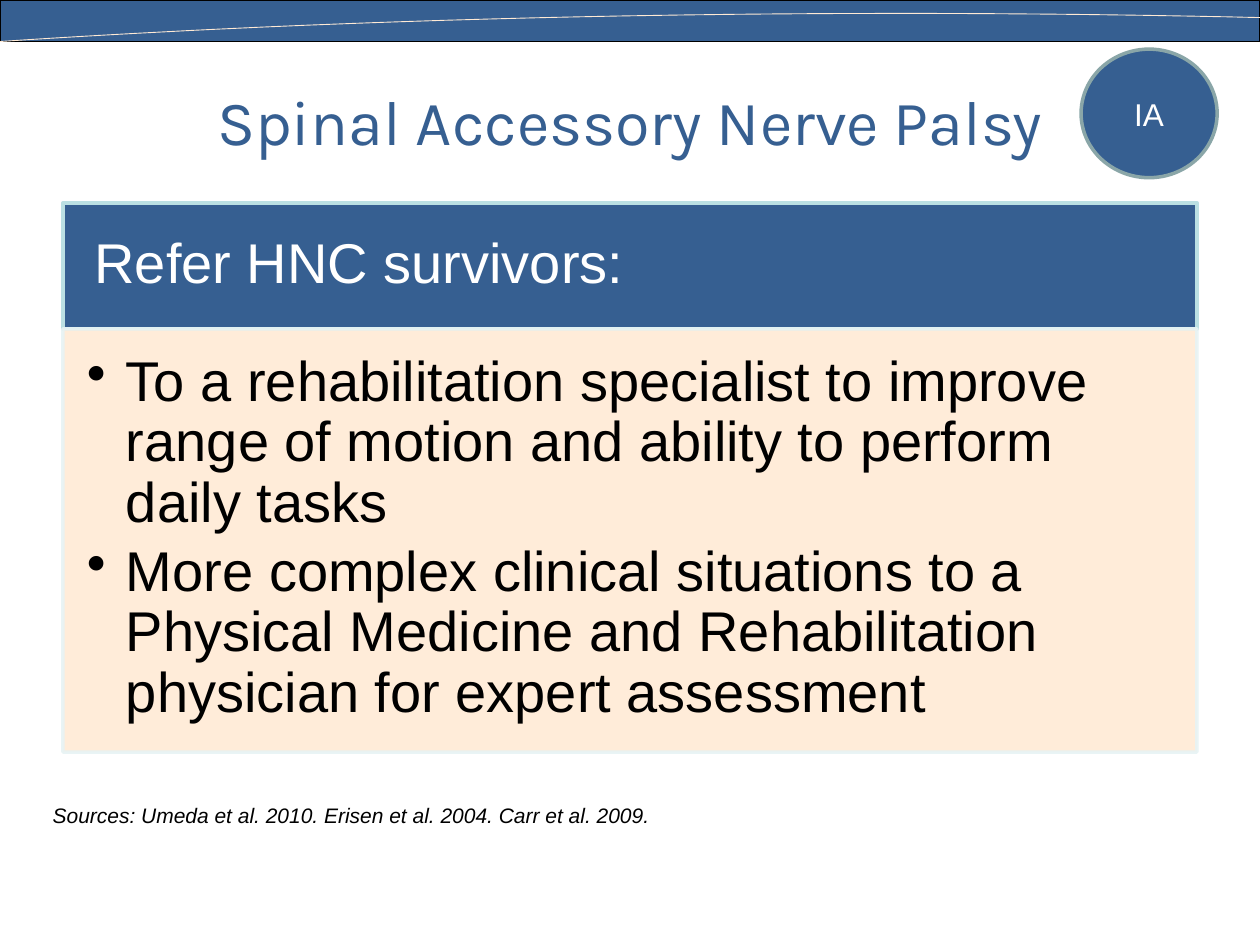
from lxml import etree
from pptx import Presentation
from pptx.dml.color import RGBColor
from pptx.enum.shapes import MSO_SHAPE
from pptx.enum.text import MSO_ANCHOR, PP_ALIGN
from pptx.oxml.ns import qn
from pptx.util import Inches, Pt

RECT, OVAL = MSO_SHAPE.RECTANGLE, MSO_SHAPE.OVAL
TOP, MID = MSO_ANCHOR.TOP, MSO_ANCHOR.MIDDLE
LEFT, MIDDLE = PP_ALIGN.LEFT, PP_ALIGN.CENTER
COLORS = {
    "blue": "365F91", "peach": "FFEAD5", "aqua": "BBE0E3", "pale": "E7F3F4",
    "sage": "8AA6A8", "black": "000000", "white": "FFFFFF",
}


def color(name):
    """Return the named palette colour."""
    return RGBColor.from_string(COLORS[name])


def fade(fill, percent):
    """Set the opacity of a solid fill element."""
    tint = fill.find(qn("a:srgbClr"))
    etree.SubElement(tint, qn("a:alpha")).set("val", str(percent * 1000))


def shape(slide, kind, box, fill, line, width, alpha=100):
    """Add a filled, outlined preset shape."""
    item = slide.shapes.add_shape(kind, *map(Inches, box))
    item.shadow.inherit = False
    item.fill.solid()
    item.fill.fore_color.rgb = color(fill)
    item.line.color.rgb = color(line)
    item.line.width = Pt(width)
    if alpha < 100:
        props = item._element.spPr
        fade(props.find(qn("a:solidFill")), alpha)
        fade(props.find(qn("a:ln")).find(qn("a:solidFill")), alpha)
    return item


def write(item, lines, size, tone="black", font="Arial", italic=False, align=LEFT,
          anchor=TOP, pads=(0.1, 0.05, 0.1, 0.05), lead=1.0, after=0, bullet=0):
    """Fill a shape with formatted paragraphs."""
    frame = item.text_frame
    frame.word_wrap = True
    frame.vertical_anchor = anchor
    (frame.margin_left, frame.margin_top,
     frame.margin_right, frame.margin_bottom) = map(Inches, pads)
    for n, line in enumerate(lines):
        para = frame.add_paragraph() if n else frame.paragraphs[0]
        para.text = line
        para.alignment = align
        para.line_spacing = lead
        para.space_after = Pt(after)
        if bullet:
            props = para._p.get_or_add_pPr()
            props.set("marL", str(Inches(bullet)))
            props.set("indent", str(-Inches(bullet)))
            etree.SubElement(props, qn("a:buChar")).set("char", "•")
        face = para.runs[0].font
        face.name, face.size, face.italic = font, Pt(size), italic
        face.color.rgb = color(tone)


def label(slide, box, text, size, **style):
    """Add a text box with one paragraph."""
    item = slide.shapes.add_textbox(*map(Inches, box))
    write(item, [text], size, **style)


def banner(slide, box):
    """Draw the top band with its fine curve."""
    x, y, w, h = box
    shape(slide, RECT, box, "blue", "black", 0.75)
    knots = [(w, 0.14), (0.744 * w, 0.08), (0.379 * w, 0.08), (0, h)]
    steps = 60
    dots = []
    for n in range(steps + 1):
        t = n / steps
        parts = ((1 - t) ** 3, 3 * t * (1 - t) ** 2, 3 * t * t * (1 - t), t ** 3)
        dots.append((Inches(x + sum(p * k[0] for p, k in zip(parts, knots))),
                     Inches(y + sum(p * k[1] for p, k in zip(parts, knots)))))
    path = slide.shapes.build_freeform(*dots[0])
    path.add_line_segments(dots[1:], close=False)
    curve = path.convert_to_shape()
    curve.shadow.inherit = False
    curve.fill.background()
    curve.line.color.rgb = color("peach")
    curve.line.width = Pt(0.5)


def panel(slide, box, title, points):
    """Stack a heading bar on a list of points."""
    x, y, w, h = box
    bar = 1.0
    head = shape(slide, RECT, (x, y, w, bar), "blue", "aqua", 2)
    write(head, [title], 32, tone="white", anchor=MID, lead=0.9,
          pads=(0.25, 0.14, 0.25, 0.14))
    body = shape(slide, RECT, (x, y + bar, w, h - bar), "peach", "pale", 2, alpha=90)
    write(body, points, 32, lead=0.9, after=5, bullet=0.31,
          pads=(0.19, 0.19, 0.25, 0.28))


def badge(slide, box, text):
    """Draw the round grade mark."""
    disc = shape(slide, OVAL, box, "blue", "sage", 2)
    write(disc, [text], 18, tone="white", align=MIDDLE, anchor=MID)


def main():
    """Build and save the slide."""
    deck = Presentation()
    deck.slide_width, deck.slide_height = Inches(10), Inches(7.5)
    slide = deck.slides.add_slide(deck.slide_layouts[6])
    banner(slide, (0, 0, 10, 0.33))
    label(slide, (0.5, 0.33, 9, 1.25), "Spinal Accessory Nerve Palsy", 36,
          tone="blue", font="Karla", align=MIDDLE, anchor=MID)
    panel(slide, (0.5, 1.61, 9, 4.36), "Refer HNC survivors:", [
        "To a rehabilitation specialist to improve range of motion "
        "and ability to perform daily tasks",
        "More complex clinical situations to a Physical Medicine and "
        "Rehabilitation physician for expert assessment",
    ])
    badge(slide, (8.58, 0.39, 1.08, 1.02), "IA")
    label(slide, (0.32, 6.32, 9.5, 0.3),
          "Sources: Umeda et al. 2010. Erisen et al. 2004. Carr et al. 2009.",
          12, italic=True, after=6)
    deck.save("out.pptx")


if __name__ == "__main__":
    main()
